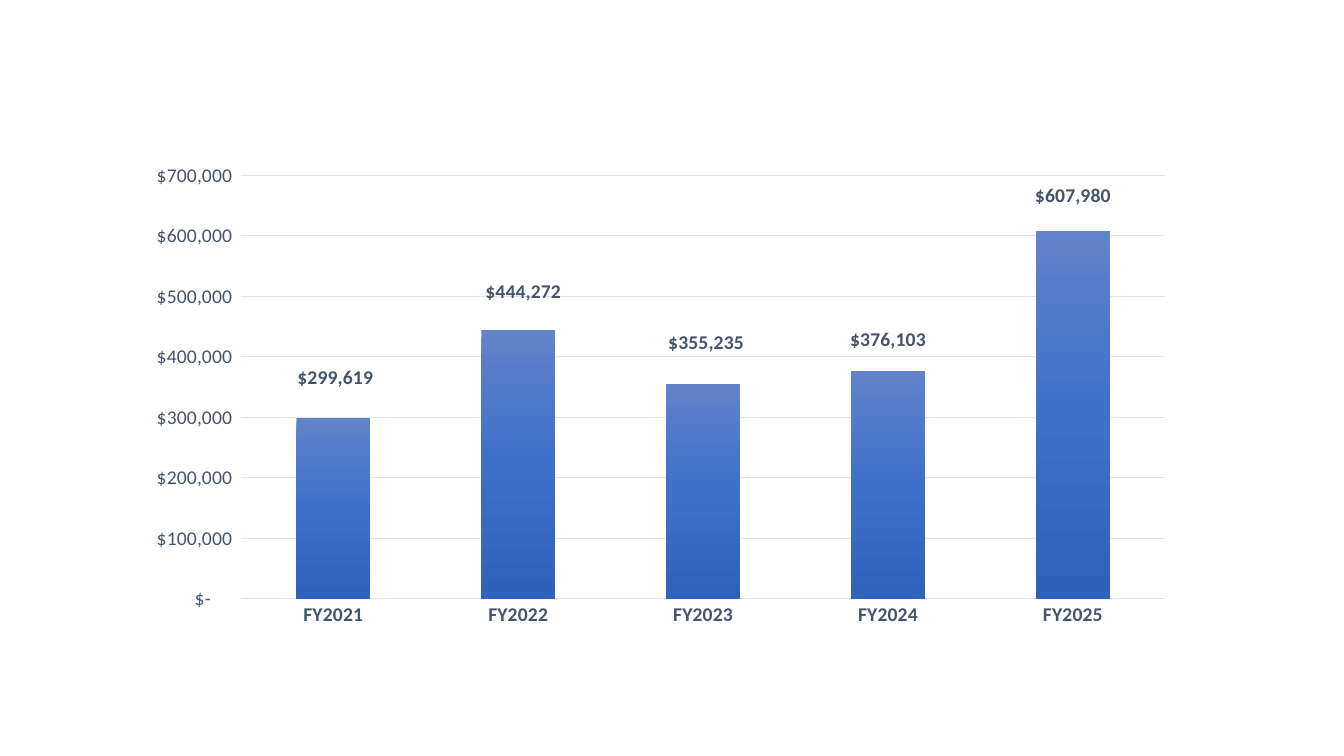
from copy import deepcopy

from lxml.etree import SubElement
from pptx import Presentation
from pptx.chart.data import CategoryChartData
from pptx.dml.color import RGBColor
from pptx.enum.chart import XL_CHART_TYPE, XL_LABEL_POSITION, XL_TICK_MARK
from pptx.oxml.ns import qn
from pptx.util import Inches, Pt

COLORS = {
    "text": "44546A",
    "grid": "E0E5EB",
    "bar_top": "6183CB",
    "bar_middle": "3E70CA",
    "bar_bottom": "3062BB",
}
FONT = "Calibri"
ACCOUNTING = '_("$"* #,##0_);_("$"* \\(#,##0\\);_("$"* "-"??_);_(@_)'
AMOUNTS = {
    "FY2021": 299619,
    "FY2022": 444272,
    "FY2023": 355235,
    "FY2024": 376103,
    "FY2025": 607980,
}
# Shift of each value label from the top of its bar, in inches
LABEL_SHIFTS = [(0.02, -0.24), (0.05, -0.22), (0.03, -0.25), (0, -0.16), (0, -0.19)]
CHART_EXTENSION = "http://schemas.microsoft.com/office/drawing/2012/chart"


def color(name):
    return RGBColor.from_string(COLORS[name])


def format_font(font, bold=False):
    font.name = FONT
    font.size = Pt(14)
    font.bold = bold
    font.color.rgb = color("text")


def format_line(line):
    line.color.rgb = color("grid")
    line.width = Pt(0.75)


def set_layout(parent, index, **settings):
    """Place a chart part by hand, replacing any automatic layout."""
    for old_layout in parent.findall(qn("c:layout")):
        parent.remove(old_layout)
    layout = SubElement(parent, qn("c:layout"))
    parent.insert(index, layout)
    manual = SubElement(layout, qn("c:manualLayout"))
    for name, value in settings.items():
        SubElement(manual, qn(f"c:{name}")).set("val", str(value))


def format_axes(chart):
    category_axis = chart.category_axis
    category_axis.major_tick_mark = XL_TICK_MARK.NONE
    category_axis.has_major_gridlines = False
    format_line(category_axis.format.line)
    format_font(category_axis.tick_labels.font, bold=True)

    value_axis = chart.value_axis
    value_axis.major_tick_mark = XL_TICK_MARK.NONE
    value_axis.minimum_scale = 0
    value_axis.maximum_scale = 700000
    value_axis.major_unit = 100000
    value_axis.format.line.fill.background()
    format_line(value_axis.major_gridlines.format.line)
    format_font(value_axis.tick_labels.font)
    value_axis.tick_labels.number_format = ACCOUNTING
    value_axis.tick_labels.number_format_is_linked = False


def fill_bars(series):
    fill = series.format.fill
    fill.gradient()
    fill.gradient_angle = 270
    stop_list = series._element.find(".//" + qn("a:gsLst"))
    stop_list.insert(1, deepcopy(stop_list[0]))
    names = ("bar_top", "bar_middle", "bar_bottom")
    for stop, name, position in zip(fill.gradient_stops, names, (0, 0.5, 1)):
        stop.color.rgb = color(name)
        stop.position = position


def hide_leader_lines(labels_element):
    for leader_lines in labels_element.findall(qn("c:showLeaderLines")):
        leader_lines.set("val", "0")
    extension_list = SubElement(labels_element, qn("c:extLst"))
    extension = SubElement(extension_list, qn("c:ext"), nsmap={"c15": CHART_EXTENSION})
    extension.set("uri", "{CE6537A1-D6FC-4f65-9D91-7224C49458BB}")
    SubElement(extension, f"{{{CHART_EXTENSION}}}showLeaderLines").set("val", "0")


def label_bars(series, width, height):
    labels = series.data_labels
    labels.show_value = True
    labels.number_format = ACCOUNTING
    labels.number_format_is_linked = False
    labels.position = XL_LABEL_POSITION.OUTSIDE_END
    format_font(labels.font, bold=True)
    for index in range(len(LABEL_SHIFTS)):
        label = series.points[index].data_label
        label.position = XL_LABEL_POSITION.OUTSIDE_END
        format_font(label.font, bold=True)
    for element, (x, y) in zip(labels._element.findall(qn("c:dLbl")), LABEL_SHIFTS):
        set_layout(element, 1, x=x / width, y=y / height)
    hide_leader_lines(labels._element)


def add_amount_chart(slide, left, top, width, height):
    data = CategoryChartData(number_format=ACCOUNTING)
    data.categories = list(AMOUNTS)
    data.add_series("Series 1", list(AMOUNTS.values()))
    chart = slide.shapes.add_chart(
        XL_CHART_TYPE.COLUMN_CLUSTERED,
        Inches(left), Inches(top), Inches(width), Inches(height), data,
    ).chart
    chart.has_title = False
    chart.has_legend = False
    chart.font.name = FONT
    chart.font.size = Pt(10)

    # Plot area
    plot = chart.plots[0]
    plot.gap_width = 150
    plot.vary_by_categories = False
    plot_area = chart._chartSpace.find(".//" + qn("c:plotArea"))
    set_layout(plot_area, 0, layoutTarget="inner", xMode="edge", yMode="edge",
               x=1.21 / width, y=0.1 / height, w=9.17 / width, h=4.22 / height)

    # Axes, bars and value labels
    format_axes(chart)
    fill_bars(plot.series[0])
    label_bars(plot.series[0], width, height)


def main():
    presentation = Presentation()
    presentation.slide_width = Inches(13.33)
    presentation.slide_height = Inches(7.5)
    slide = presentation.slides.add_slide(presentation.slide_layouts[6])
    add_amount_chart(slide, 1.18, 1.62, 10.67, 4.81)
    presentation.save("out.pptx")


if __name__ == "__main__":
    main()
